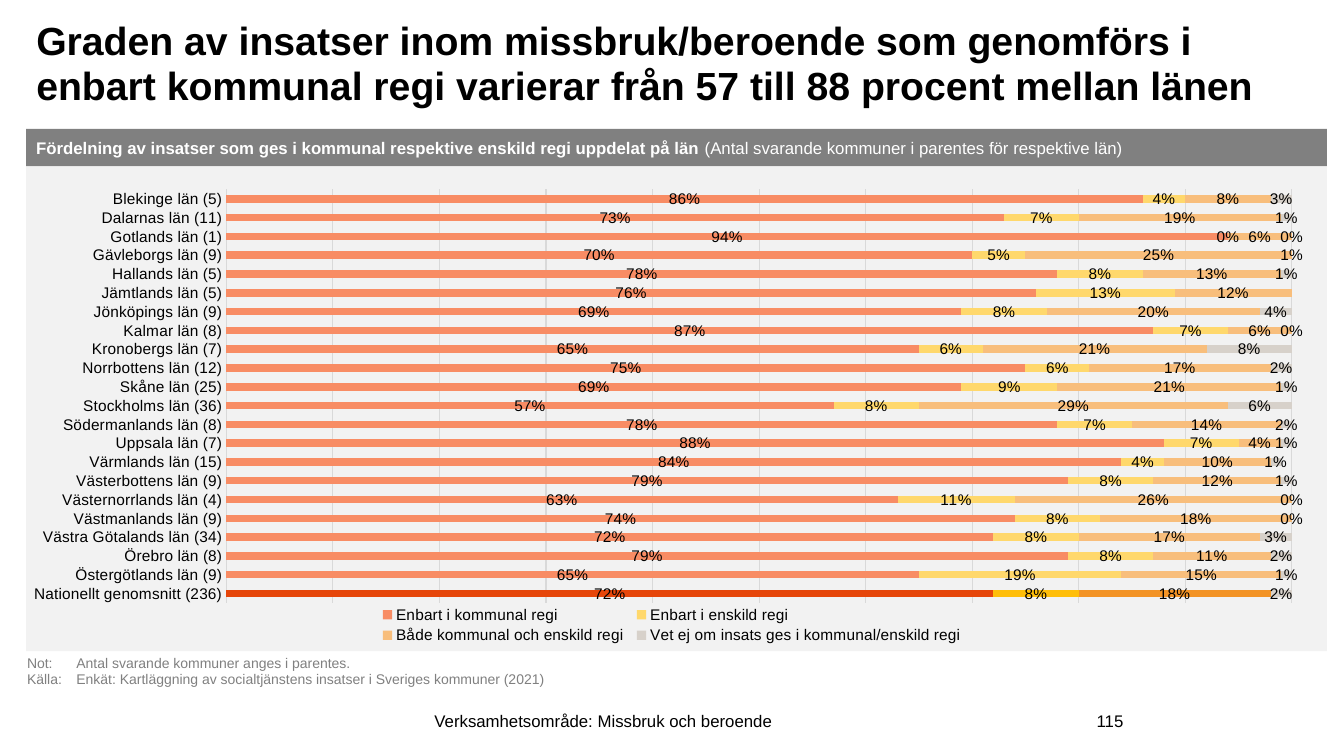
from lxml import etree
from pptx import Presentation
from pptx.chart.data import CategoryChartData
from pptx.dml.color import RGBColor
from pptx.enum.chart import XL_CHART_TYPE as ChartType, XL_LABEL_POSITION as LabelPos
from pptx.enum.chart import XL_LEGEND_POSITION as LegendPos, XL_TICK_MARK as Tick
from pptx.enum.shapes import MSO_SHAPE as Preset
from pptx.enum.text import MSO_ANCHOR as Anchor, PP_ALIGN as Align
from pptx.oxml import parse_xml
from pptx.oxml.ns import nsdecls, qn
from pptx.util import Inches, Pt


def style(font, size, color, bold=False):
    font.name, font.size, font.bold = "Arial", Pt(size), bold
    font.color.rgb = RGBColor.from_string(color)


def manual_layout(x, y, w, h, inner=False):
    """Chart layout in fractions of the chart's own size."""
    target = '<c:layoutTarget val="inner"/>' if inner else ""
    return parse_xml(
        f'<c:layout {nsdecls("c")}><c:manualLayout>{target}'
        '<c:xMode val="edge"/><c:yMode val="edge"/>'
        f'<c:x val="{x}"/><c:y val="{y}"/><c:w val="{w}"/><c:h val="{h}"/>'
        '</c:manualLayout></c:layout>')


deck = Presentation()
deck.slide_width, deck.slide_height = Inches(13.33), Inches(7.5)
slide = deck.slides.add_slide(deck.slide_layouts[5])

# Grey panel and its heading band
bands = []
for top, height, color in [(1.65, 4.81, "F2F2F2"), (1.28, 0.37, "808080")]:
    band = slide.shapes.add_shape(Preset.RECTANGLE, Inches(0.26), Inches(top),
                                  Inches(12.9), Inches(height))
    band.shadow.inherit = False
    band.fill.solid()
    band.fill.fore_color.rgb = RGBColor.from_string(color)
    band.line.fill.background()
    bands.append(band)

heading = bands[1].text_frame
heading.word_wrap = True
heading.vertical_anchor = Anchor.MIDDLE
heading.paragraphs[0].alignment = Align.LEFT
for words, bold in [
    ("Fördelning av insatser som ges i kommunal respektive enskild regi uppdelat på län ", True),
    ("(Antal svarande kommuner i parentes för respektive län)", False),
]:
    run = heading.paragraphs[0].add_run()
    run.text = words
    style(run.font, 12, "FFFFFF", bold)

# Title
title = slide.shapes.title
title.left, title.top = Inches(0.26), Inches(0.15)
title.width, title.height = Inches(12.35), Inches(1.14)
title.text_frame.word_wrap = True
title.text_frame.vertical_anchor = Anchor.TOP
headline = title.text_frame.paragraphs[0]
headline.alignment, headline.line_spacing = Align.LEFT, 0.95
run = headline.add_run()
run.text = ("Graden av insatser inom missbruk/beroende som genomförs i "
            "enbart kommunal regi varierar från 57 till 88 procent mellan länen")
style(run.font, 28, "000000", True)

# Share in percent per county: municipal, private, both, unknown
counties = [
    ("Blekinge län (5)", 86, 4, 8, 3),
    ("Dalarnas län (11)", 73, 7, 19, 1),
    ("Gotlands län (1)", 94, 0, 6, 0),
    ("Gävleborgs län (9)", 70, 5, 25, 1),
    ("Hallands län (5)", 78, 8, 13, 1),
    ("Jämtlands län (5)", 76, 13, 12, 0),
    ("Jönköpings län (9)", 69, 8, 20, 4),
    ("Kalmar län (8)", 87, 7, 6, 0),
    ("Kronobergs län (7)", 65, 6, 21, 8),
    ("Norrbottens län (12)", 75, 6, 17, 2),
    ("Skåne län (25)", 69, 9, 21, 1),
    ("Stockholms län (36)", 57, 8, 29, 6),
    ("Södermanlands län (8)", 78, 7, 14, 2),
    ("Uppsala län (7)", 88, 7, 4, 1),
    ("Värmlands län (15)", 84, 4, 10, 1),
    ("Västerbottens län (9)", 79, 8, 12, 1),
    ("Västernorrlands län (4)", 63, 11, 26, 0),
    ("Västmanlands län (9)", 74, 8, 18, 0),
    ("Västra Götalands län (34)", 72, 8, 17, 3),
    ("Örebro län (8)", 79, 8, 11, 2),
    ("Östergötlands län (9)", 65, 19, 15, 1),
    ("Nationellt genomsnitt (236)", 72, 8, 18, 2),
]
# Name, colour, colour of the national average
providers = [
    ("Enbart i kommunal regi", "F88C64", "E6460A"),
    ("Enbart i enskild regi", "FFD86C", "FFBE0A"),
    ("Både kommunal och enskild regi", "F8BE7C", "F39325"),
    ("Vet ej om insats ges i kommunal/enskild regi", "D7D1CA", None),
]
shares = CategoryChartData(number_format="0%")
shares.categories = [county[0] for county in counties]
for column, provider in enumerate(providers, start=1):
    shares.add_series(provider[0], [county[column] / 100 for county in counties])

chart = slide.shapes.add_chart(ChartType.BAR_STACKED, Inches(0.26), Inches(1.67),
                               Inches(12.81), Inches(4.77), shares).chart
chart.has_title = False
style(chart.font, 11, "000000")
plot = chart.plots[0]
plot.gap_width, plot.overlap, plot.vary_by_categories = 150, 100, False

for series, (_, color, average_color) in zip(plot.series, providers):
    series.format.fill.solid()
    series.format.fill.fore_color.rgb = RGBColor.from_string(color)
    if average_color:
        average = series.points[len(counties) - 1].format.fill
        average.solid()
        average.fore_color.rgb = RGBColor.from_string(average_color)
    labels = series.data_labels
    labels.show_value, labels.position = True, LabelPos.CENTER
    labels.number_format, labels.number_format_is_linked = "0%", False
    style(labels.font, 11, "000000")

county_axis, share_axis = chart.category_axis, chart.value_axis
county_axis.reverse_order = True
county_axis.major_tick_mark = county_axis.minor_tick_mark = Tick.NONE
style(county_axis.tick_labels.font, 11, "000000")
share_axis.visible = False
share_axis.minimum_scale, share_axis.maximum_scale, share_axis.major_unit = 0, 1, 0.1
share_axis.has_major_gridlines = True
for line in (county_axis.format.line, share_axis.major_gridlines.format.line):
    line.color.rgb = RGBColor.from_string("D9D9D9")
    line.width = Pt(0.75)

chart.has_legend = True
legend = chart.legend
legend.position, legend.include_in_layout = LegendPos.BOTTOM, False
style(legend.font, 11, "000000")
plot_area = plot_area = chart.plots[0]._element.getparent()
for old in plot_area.findall(qn("c:layout")):
    plot_area.remove(old)
plot_area.insert(0, manual_layout(0.155, 0.044, 0.825, 0.86, inner=True))
for old in legend._element.findall(qn("c:layout")):
    legend._element.remove(old)
legend._element.find(qn("c:legendPos")).addnext(manual_layout(0.27, 0.905, 0.46, 0.09))

# Note, page number and footer
note_lines = ["Not:\tAntal svarande kommuner anges i parentes.",
              "Källa:\tEnkät: Kartläggning av socialtjänstens insatser i Sveriges kommuner (2021)"]
for left, top, width, height, lines, size, color, anchor, align in [
    (0.17, 6.44, 12.64, 0.45, note_lines, 10, "808080", Anchor.TOP, Align.LEFT),
    (9.85, 6.95, 1.39, 0.4, ["115"], 12, "000000", Anchor.MIDDLE, Align.RIGHT),
    (2.69, 6.95, 6.59, 0.4, ["Verksamhetsområde: Missbruk och beroende"], 12, "000000",
     Anchor.MIDDLE, Align.CENTER),
]:
    frame = slide.shapes.add_textbox(Inches(left), Inches(top),
                                     Inches(width), Inches(height)).text_frame
    frame.word_wrap, frame.vertical_anchor = True, anchor
    for number, words in enumerate(lines):
        paragraph = frame.add_paragraph() if number else frame.paragraphs[0]
        paragraph.alignment = align
        if "\t" in words:
            tabs = etree.SubElement(paragraph._p.get_or_add_pPr(), qn("a:tabLst"))
            etree.SubElement(tabs, qn("a:tab"), pos=str(Inches(0.49)), algn="l")
        run = paragraph.add_run()
        run.text = words
        style(run.font, size, color)

deck.save("out.pptx")
